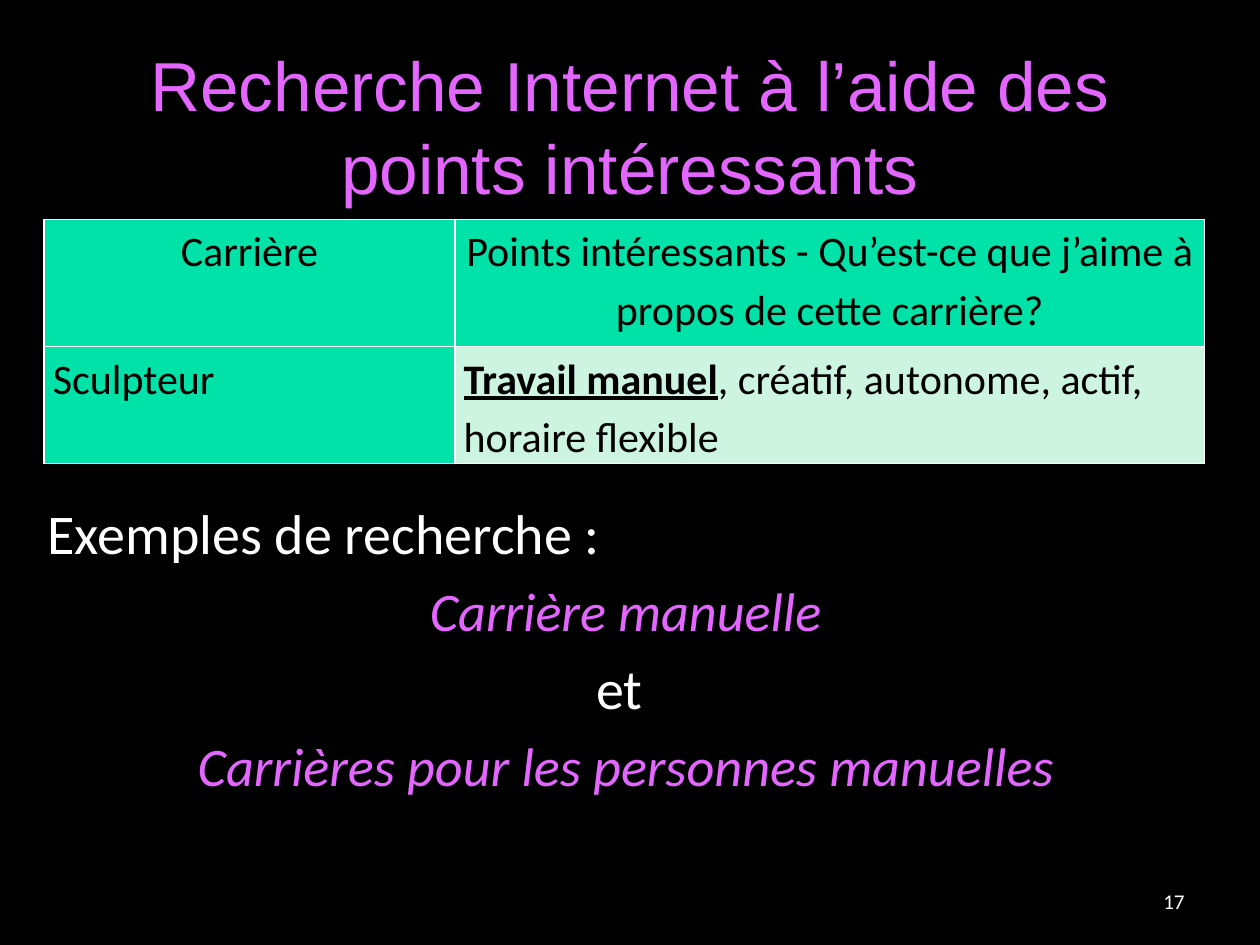
from lxml import etree
from pptx import Presentation
from pptx.dml.color import RGBColor
from pptx.enum.text import MSO_ANCHOR, PP_ALIGN
from pptx.oxml.ns import qn
from pptx.util import Inches, Pt

LEFT, CENTER, RIGHT = PP_ALIGN.LEFT, PP_ALIGN.CENTER, PP_ALIGN.RIGHT
TOP, MIDDLE = MSO_ANCHOR.TOP, MSO_ANCHOR.MIDDLE

COLORS = {"black": "000000", "white": "FFFFFF", "pink": "E366FF",
          "green": "00E2A7", "mint": "CCF4E1"}

TITLE_FONT = {"name": "Arial", "size": Pt(39.6)}
QUESTION_FONT = {"name": "Calibri", "size": Pt(32)}
SEARCH_FONT = {"name": "Calibri", "size": Pt(31), "italic": True}
NUMBER_FONT = {"name": "Calibri", "size": Pt(12)}
CELL_FONT = {"name": "Calibri", "size": Pt(24), "bold": False}
KEYWORD_FONT = {**CELL_FONT, "bold": True, "underline": True}

BODY_SPACING = {"space_before": Pt(6.4)}
CELL_SPACING = {"line_spacing": 1.15, "space_after": Pt(10)}
CELL_MARGINS = {"margin_left": Inches(0.07), "margin_right": Inches(0.07),
                "margin_top": 0, "margin_bottom": 0}

TEXTS = [
    ((0.5, 0.37, 9, 1.25), MIDDLE, {}, [
        (CENTER, [("Recherche Internet à l’aide des points intéressants", TITLE_FONT, "pink")]),
    ]),
    ((0.28, 3.91, 9.37, 2.24), TOP, BODY_SPACING, [
        (LEFT, [("Exemples de recherche :", QUESTION_FONT, "white")]),
        (CENTER, [("Carrière manuelle", SEARCH_FONT, "pink")]),
        (CENTER, [("et ", QUESTION_FONT, "white")]),
        (CENTER, [("Carrières pour les personnes manuelles", SEARCH_FONT, "pink")]),
    ]),
    ((7.17, 6.95, 2.33, 0.4), MIDDLE, {}, [
        (RIGHT, [("17", NUMBER_FONT, "white")]),
    ]),
]

TABLE_LEFT, TABLE_TOP = 0.35, 1.74
COLUMN_WIDTHS = [3.26, 5.95]
ROW_HEIGHTS = [1.01, 0.93]
CAREERS = [
    [("green", CENTER, [("Carrière", CELL_FONT, "black")]),
     ("green", CENTER, [("Points intéressants - Qu’est-ce que j’aime à propos de cette carrière?",
                         CELL_FONT, "black")])],
    [("green", LEFT, [("Sculpteur", CELL_FONT, "black")]),
     ("mint", LEFT, [("Travail manuel", KEYWORD_FONT, "black"),
                     (", créatif, autonome, actif, horaire flexible", CELL_FONT, "black")])],
]


def color(key):
    return RGBColor.from_string(COLORS[key])


def apply(target, values):
    for attribute, value in values.items():
        setattr(target, attribute, value)


def write_paragraph(paragraph, align, runs, spacing):
    apply(paragraph, {"alignment": align, **spacing})
    for words, font, ink in runs:
        run = paragraph.add_run()
        run.text = words
        apply(run.font, font)
        run.font.color.rgb = color(ink)


def add_text(slide, place, anchor, spacing, paragraphs):
    frame = slide.shapes.add_textbox(*map(Inches, place)).text_frame
    apply(frame, {"word_wrap": True, "vertical_anchor": anchor})
    for index, (align, runs) in enumerate(paragraphs):
        paragraph = frame.add_paragraph() if index else frame.paragraphs[0]
        write_paragraph(paragraph, align, runs, spacing)


def add_borders(cell):
    properties = cell._tc.get_or_add_tcPr()
    for side in ("a:lnL", "a:lnR", "a:lnT", "a:lnB"):
        border = etree.SubElement(properties, qn(side), w=str(Pt(1)))
        fill = etree.SubElement(border, qn("a:solidFill"))
        etree.SubElement(fill, qn("a:srgbClr"), val=COLORS["white"])


def add_careers(slide):
    table = slide.shapes.add_table(
        len(ROW_HEIGHTS), len(COLUMN_WIDTHS), Inches(TABLE_LEFT), Inches(TABLE_TOP),
        Inches(sum(COLUMN_WIDTHS)), Inches(sum(ROW_HEIGHTS))).table
    for column, width in zip(table.columns, COLUMN_WIDTHS):
        column.width = Inches(width)
    for row, height, entries in zip(table.rows, ROW_HEIGHTS, CAREERS):
        row.height = Inches(height)
        for cell, (background, align, runs) in zip(row.cells, entries):
            apply(cell, CELL_MARGINS)
            add_borders(cell)
            cell.fill.solid()
            cell.fill.fore_color.rgb = color(background)
            write_paragraph(cell.text_frame.paragraphs[0], align, runs, CELL_SPACING)


def main():
    deck = Presentation()
    deck.slide_width, deck.slide_height = Inches(10), Inches(7.5)
    slide = deck.slides.add_slide(deck.slide_layouts[6])
    slide.background.fill.solid()
    slide.background.fill.fore_color.rgb = color("black")
    for text in TEXTS:
        add_text(slide, *text)
    add_careers(slide)
    deck.save("out.pptx")


if __name__ == "__main__":
    main()
